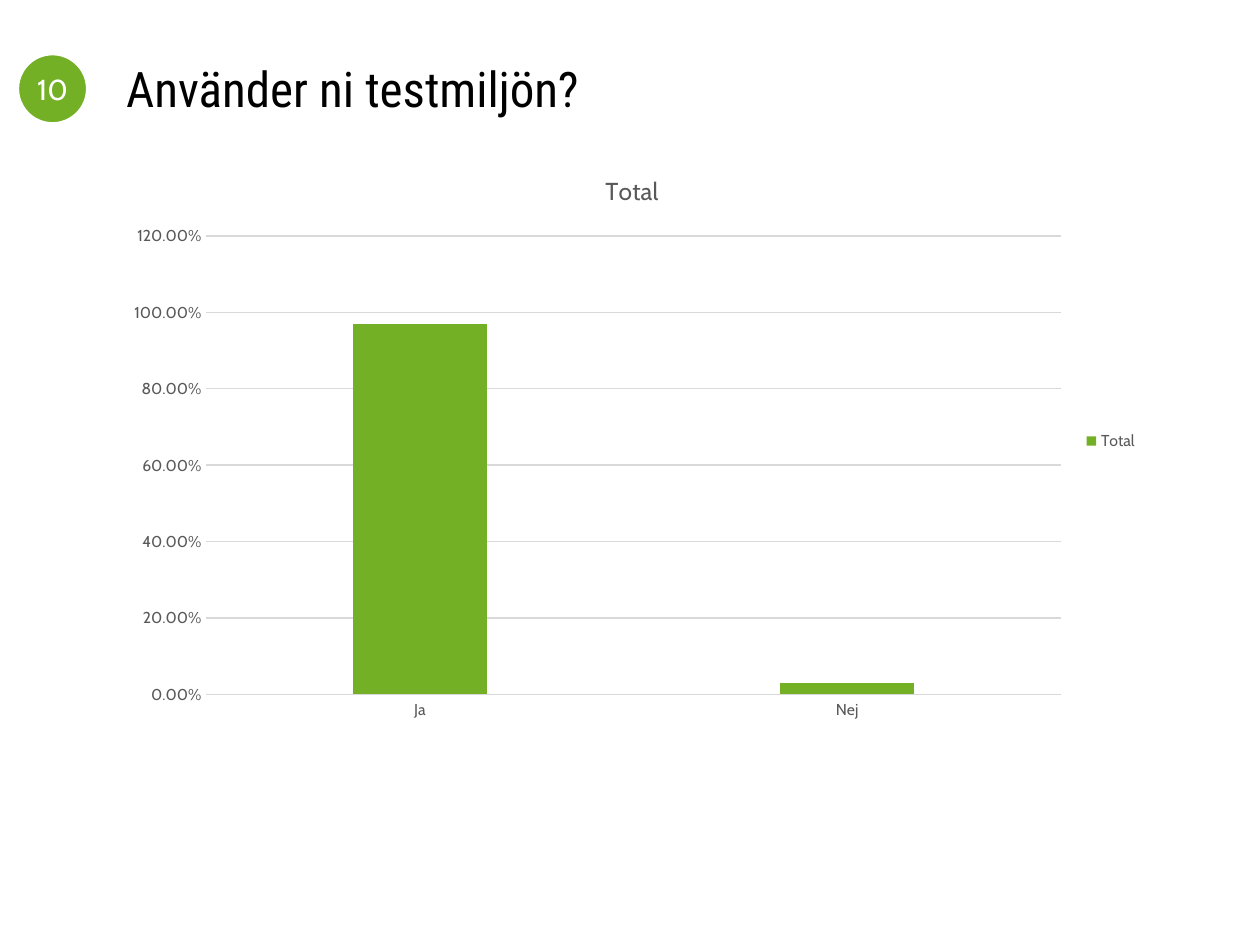
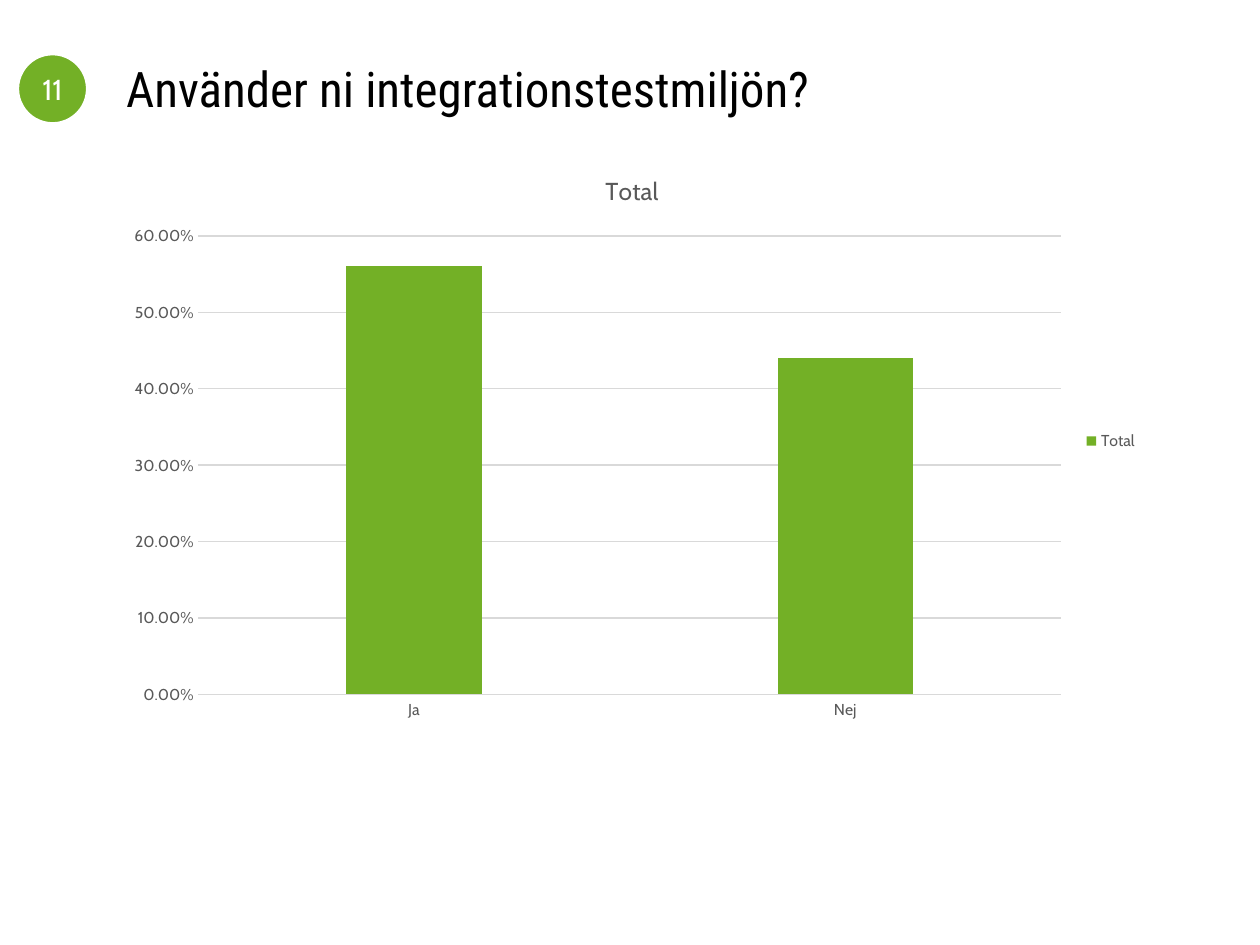
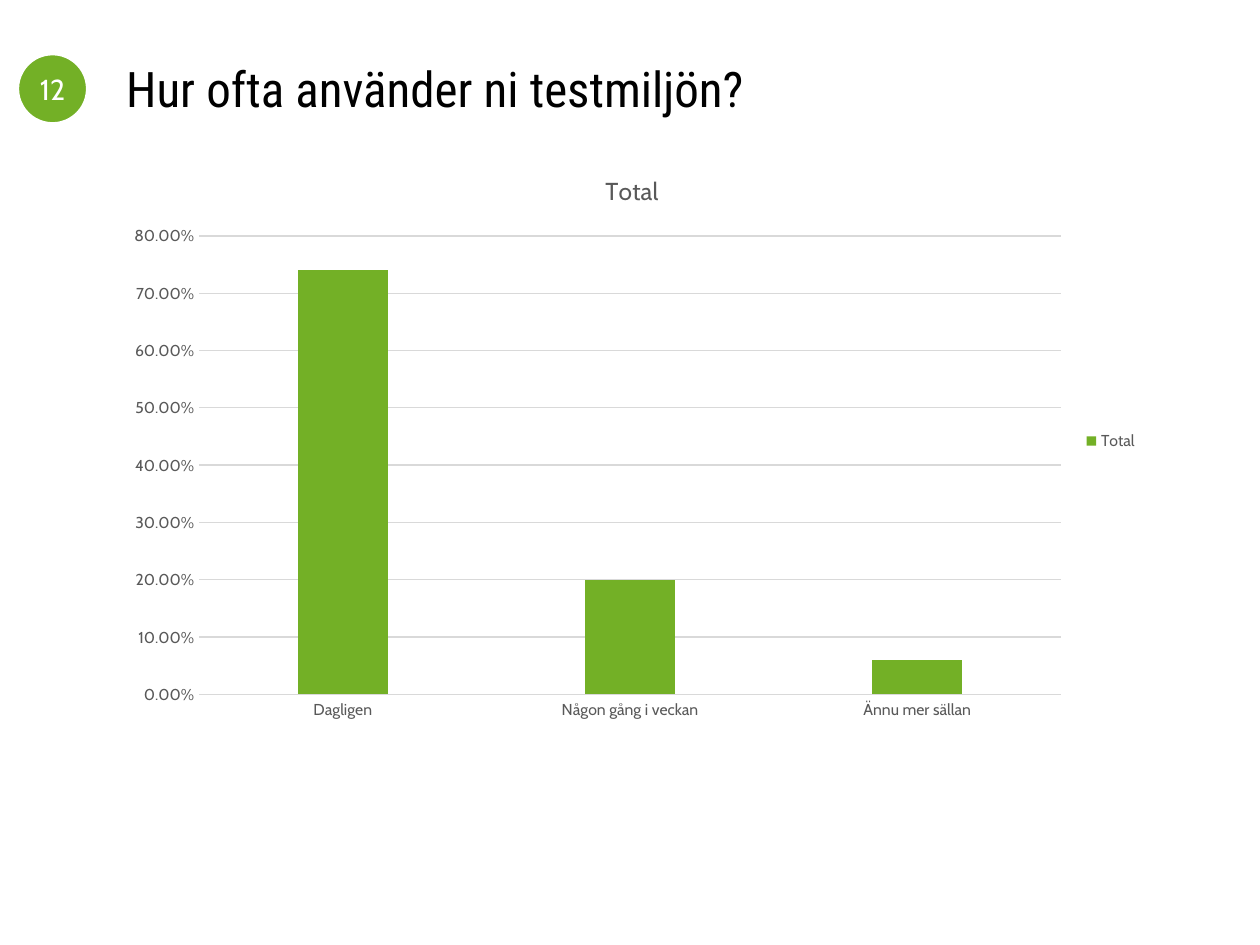
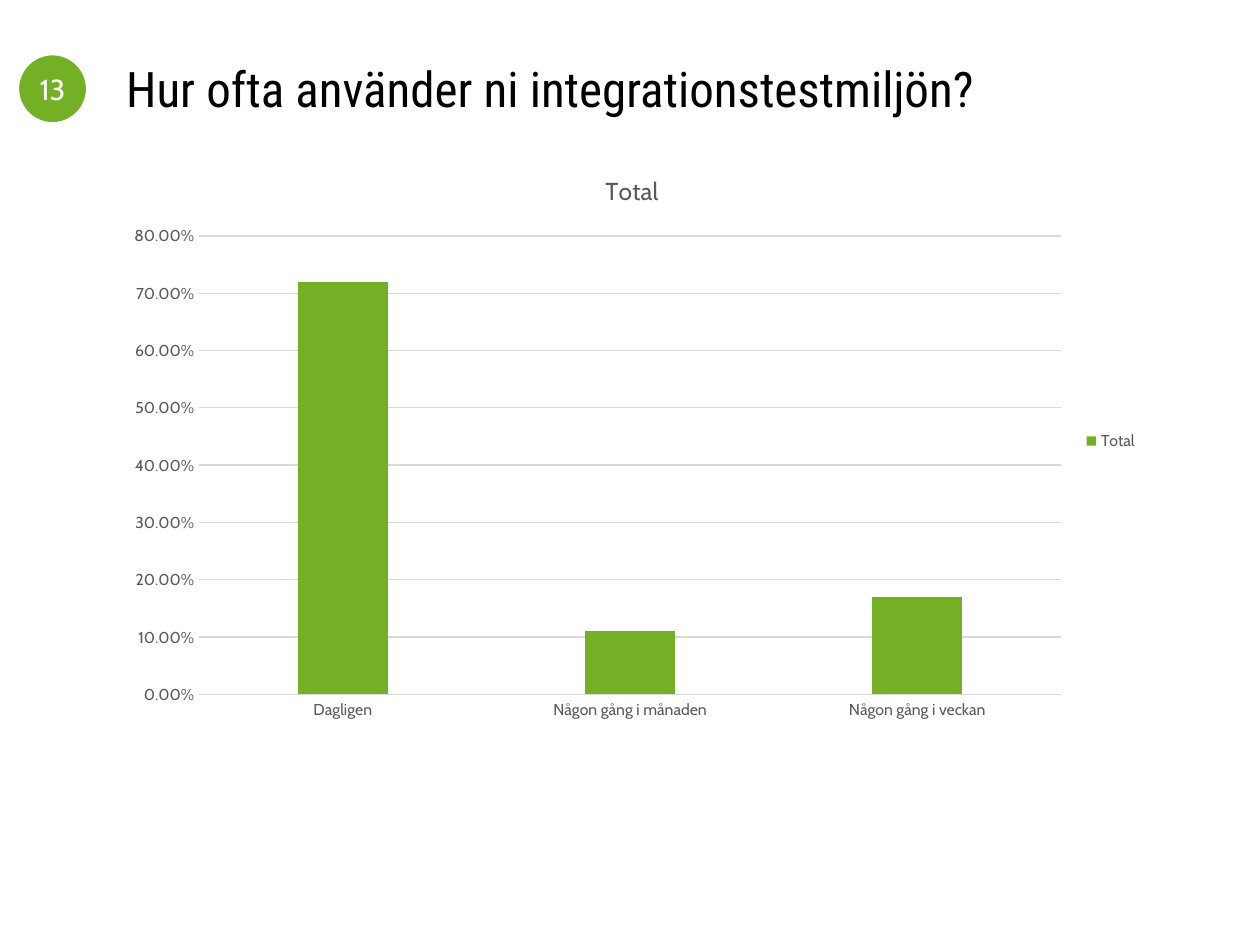
from pptx import Presentation
from pptx.chart.data import CategoryChartData
from pptx.dml.color import RGBColor
from pptx.enum.chart import XL_CHART_TYPE, XL_LEGEND_POSITION, XL_TICK_MARK
from pptx.enum.shapes import MSO_SHAPE
from pptx.enum.text import MSO_ANCHOR, MSO_AUTO_SIZE, PP_ALIGN
from pptx.util import Cm, Pt

# Enum members
COLUMN = XL_CHART_TYPE.COLUMN_CLUSTERED
RIGHT = XL_LEGEND_POSITION.RIGHT
NO_TICK = XL_TICK_MARK.NONE
OVAL = MSO_SHAPE.OVAL
MIDDLE = MSO_ANCHOR.MIDDLE
NO_FIT = MSO_AUTO_SIZE.NONE
LEFT, CENTER = PP_ALIGN.LEFT, PP_ALIGN.CENTER

# Shared style
GREEN = RGBColor(0x73, 0xB0, 0x26)
WHITE = RGBColor(0xFF, 0xFF, 0xFF)
BLACK = RGBColor(0x00, 0x00, 0x00)
GREY = RGBColor(0x59, 0x59, 0x59)
PALE = RGBColor(0xD9, 0xD9, 0xD9)
HEAD_FONT = "Roboto Condensed"
BODY_FONT = "Cabin"
EDGE = Cm(2.29)
WIDTH = Cm(20.9)
TITLE_ONLY = 5
FIRST = 10

# Question, then the share of each answer
POLLS = [
    ("Använder ni testmiljön?", {"Ja": 0.97, "Nej": 0.03}),
    ("Använder ni integrationstestmiljön?", {"Ja": 0.56, "Nej": 0.44}),
    ("Hur ofta använder ni testmiljön?",
     {"Dagligen": 0.74, "Någon gång i veckan": 0.2, "Ännu mer sällan": 0.06}),
    ("Hur ofta använder ni integrationstestmiljön?",
     {"Dagligen": 0.72, "Någon gång i månaden": 0.11,
      "Någon gång i veckan": 0.17}),
]


def set_font(font, size, color, name=BODY_FONT):
    font.name = name
    font.size = Pt(size)
    font.bold = False
    font.color.rgb = color


def set_line(line, color, width):
    line.color.rgb = color
    line.width = Pt(width)


def add_badge(slide, number):
    side = Cm(1.4)
    badge = slide.shapes.add_shape(OVAL, Cm(0.36), Cm(1.09), side, side)
    badge.shadow.inherit = False
    badge.fill.solid()
    badge.fill.fore_color.rgb = GREEN
    set_line(badge.line, WHITE, 1.5)
    frame = badge.text_frame
    frame.margin_left = frame.margin_right = Cm(0.03)
    frame.margin_top = frame.margin_bottom = Cm(0.03)
    frame.vertical_anchor = MIDDLE
    frame.text = str(number)
    para = frame.paragraphs[0]
    para.alignment = CENTER
    set_font(para.runs[0].font, 16.5, WHITE)


def set_title(slide, text):
    title = slide.shapes.title
    title.left, title.top = EDGE, Cm(1.02)
    title.width, title.height = WIDTH, Cm(1.52)
    frame = title.text_frame
    frame.auto_size = NO_FIT
    frame.vertical_anchor = MIDDLE
    frame.text = text
    para = frame.paragraphs[0]
    para.alignment = LEFT
    set_font(para.runs[0].font, 28, BLACK, HEAD_FONT)


def style_axis(axis):
    axis.major_tick_mark = axis.minor_tick_mark = NO_TICK
    set_font(axis.tick_labels.font, 9, GREY)


def add_chart(slide, shares):
    data = CategoryChartData(number_format="0.00%")
    data.categories = list(shares)
    data.add_series("Total", list(shares.values()))
    chart = slide.shapes.add_chart(
        COLUMN, EDGE, Cm(3.05), WIDTH, Cm(11.68), data).chart
    set_font(chart.font, 10, BLACK)

    # Title and legend
    chart.has_title = True
    frame = chart.chart_title.text_frame
    frame.text = "Total"
    set_font(frame.paragraphs[0].runs[0].font, 14, GREY)
    chart.chart_title.include_in_layout = False
    chart.has_legend = True
    chart.legend.position = RIGHT
    chart.legend.include_in_layout = False
    set_font(chart.legend.font, 9, GREY)

    # Axes
    cats, vals = chart.category_axis, chart.value_axis
    style_axis(cats)
    style_axis(vals)
    set_line(cats.format.line, PALE, 0.75)
    vals.format.line.fill.background()
    vals.has_major_gridlines = True
    set_line(vals.major_gridlines.format.line, PALE, 0.75)
    vals.tick_labels.number_format = "0.00%"
    vals.tick_labels.number_format_is_linked = False

    # Columns
    plot = chart.plots[0]
    plot.vary_by_categories = False
    plot.gap_width = 219
    plot.overlap = -27
    fill = plot.series[0].format.fill
    fill.solid()
    fill.fore_color.rgb = GREEN


def main():
    deck = Presentation()
    deck.slide_width, deck.slide_height = Cm(25.4), Cm(19.05)
    layout = deck.slide_layouts[TITLE_ONLY]
    for number, (text, shares) in enumerate(POLLS, FIRST):
        slide = deck.slides.add_slide(layout)
        add_badge(slide, number)
        set_title(slide, text)
        add_chart(slide, shares)
    deck.save("out.pptx")


if __name__ == "__main__":
    main()
